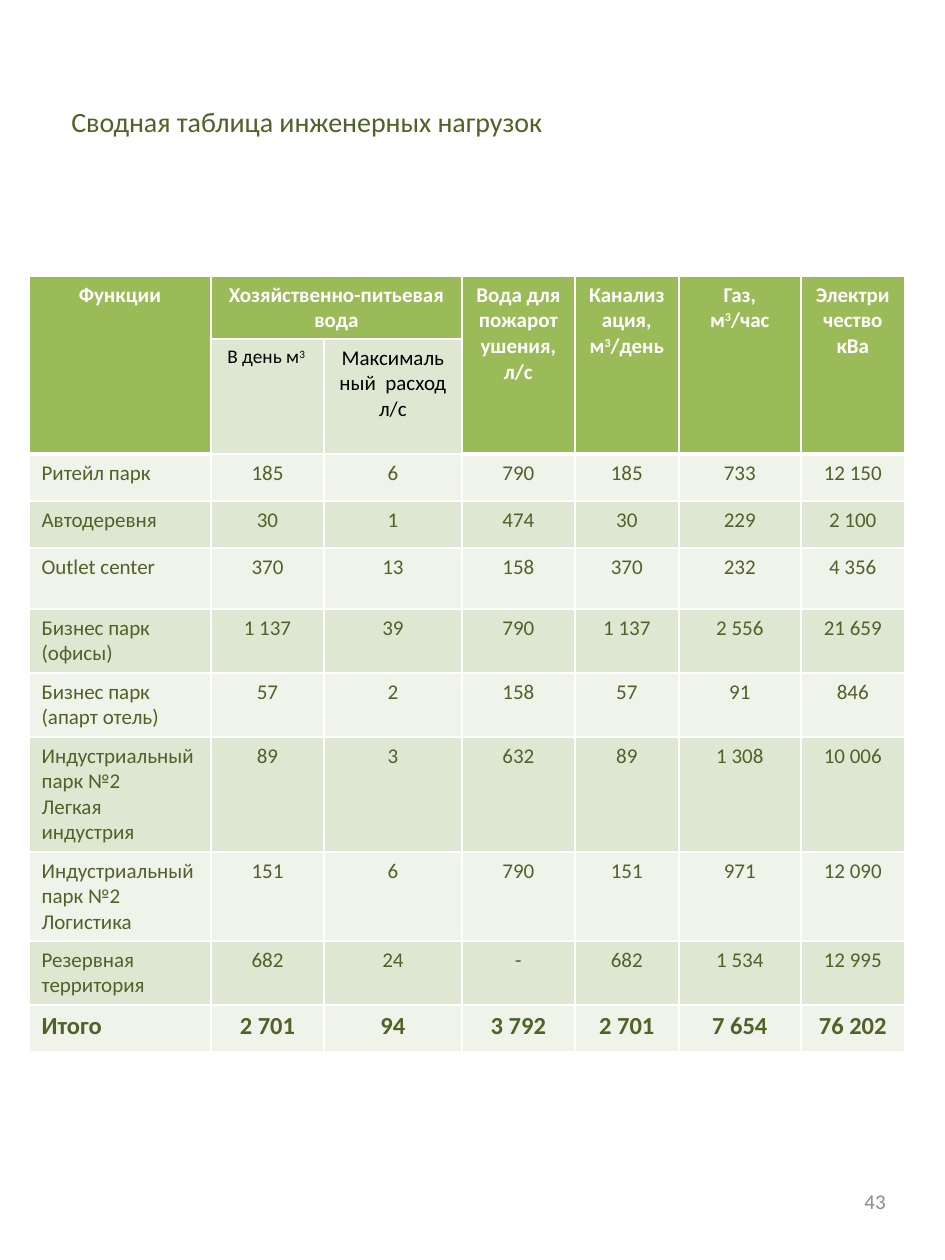
from lxml.etree import SubElement
from pptx import Presentation
from pptx.dml.color import RGBColor
from pptx.enum.text import MSO_ANCHOR as ANCHOR, PP_ALIGN as ALIGN
from pptx.oxml.ns import qn
from pptx.util import Emu, Pt

WHITE, BLACK, GREY = "FFFFFF", "000000", "8C8C8C"
GREEN, DARK_GREEN, BAND, PALE = "9BBB59", "4F6228", "DEE7D1", "EFF3EA"

COL_WIDTHS = [182, 113, 138, 113, 104, 122, 104]
ROW_HEIGHTS = [63, 115, 47, 47, 61, 64, 64, 115, 89, 64, 47]
HEADERS = {
    0: "Функции",
    1: "Хозяйственно-питьевая вода",
    3: "Вода для пожаротушения, л/с",
    4: "Канализация, м^3^/день",
    5: "Газ, м^3^/час",
    6: "Электричество кВа",
}
LOADS = [
    ["Ритейл парк", "185", "6", "790", "185", "733", "12 150"],
    ["Автодеревня", "30", "1", "474", "30", "229", "2 100"],
    ["Outlet center", "370", "13", "158", "370", "232", "4 356"],
    ["Бизнес парк (офисы)", "1 137", "39", "790", "1 137", "2 556", "21 659"],
    ["Бизнес парк (апарт отель)", "57", "2", "158", "57", "91", "846"],
    ["Индустриальный парк №2\nЛегкая индустрия", "89", "3", "632", "89", "1 308", "10 006"],
    ["Индустриальный парк №2\nЛогистика", "151", "6", "790", "151", "971", "12 090"],
    ["Резервная территория", "682", "24", "-", "682", "1 534", "12 995"],
    ["Итого", "2 701", "94", "3 792", "2 701", "7 654", "76 202"],
]


def px(n):
    """Convert pixels to EMU."""
    return Emu(round(n * 914400 / 126))


def rgb(value):
    """Turn a hex string into a colour."""
    return RGBColor.from_string(value)


def write(tf, text, size=12, color=DARK_GREEN, bold=False, align=ALIGN.LEFT):
    """Fill a text frame; newlines split paragraphs and ^ marks superscripts."""
    tf.word_wrap = True
    for i, line in enumerate(text.split("\n")):
        p = tf.paragraphs[0] if i == 0 else tf.add_paragraph()
        p.alignment = align
        for j, part in enumerate(line.split("^")):
            if not part:
                continue
            r = p.add_run()
            r.text = part
            r.font.name, r.font.size, r.font.bold = "Calibri", Pt(size), bold
            r.font.color.rgb = rgb(color)
            if j % 2:
                r.font._element.set("baseline", "30000")


def add_label(slide, box, text, anchor=ANCHOR.TOP, **fmt):
    """Place a text box in the given box."""
    tf = slide.shapes.add_textbox(*map(px, box)).text_frame
    tf.vertical_anchor = anchor
    write(tf, text, **fmt)


def style_cell(cell, fill, top=1, bottom=1):
    """Give a cell white borders and a solid fill."""
    tc_pr = cell._tc.get_or_add_tcPr()
    for side, width in zip("LRTB", (1, 1, top, bottom)):
        ln = SubElement(tc_pr, qn(f"a:ln{side}"), w=str(Pt(width)))
        SubElement(SubElement(ln, qn("a:solidFill")), qn("a:srgbClr"), val=WHITE)
    cell.fill.solid()
    cell.fill.fore_color.rgb = rgb(fill)


def add_header(table):
    """Build the two header rows with their merged cells."""
    for col in range(len(COL_WIDTHS)):
        split = col in (1, 2)
        style_cell(table.cell(0, col), GREEN, bottom=1 if split else 3)
        style_cell(table.cell(1, col), BAND if split else GREEN, bottom=1 if split else 3)
        if not split:
            table.cell(0, col).merge(table.cell(1, col))
    table.cell(0, 1).merge(table.cell(0, 2))
    for col, text in HEADERS.items():
        write(table.cell(0, col).text_frame, text, color=WHITE, bold=True, align=ALIGN.CENTER)
    write(table.cell(1, 1).text_frame, "В день м^3 ^", size=11, color=BLACK, align=ALIGN.CENTER)
    write(table.cell(1, 2).text_frame, "Максимальный  расход л/с", color=BLACK, align=ALIGN.CENTER)


def add_loads_table(slide, left, top):
    """Build the table of engineering loads from its top left corner."""
    size = sum(COL_WIDTHS), sum(ROW_HEIGHTS)
    frame = slide.shapes.add_table(len(ROW_HEIGHTS), len(COL_WIDTHS), *map(px, (left, top, *size)))
    table = frame.table
    for column, width in zip(table.columns, COL_WIDTHS):
        column.width = px(width)
    for row, height in zip(table.rows, ROW_HEIGHTS):
        row.height = px(height)
    add_header(table)
    for i, values in enumerate(LOADS):
        total = i == len(LOADS) - 1
        for col, text in enumerate(values):
            cell = table.cell(i + 2, col)
            style_cell(cell, BAND if i % 2 else PALE, top=3 if i == 0 and col not in (1, 2) else 1)
            write(cell.text_frame, text, size=14 if total else 12, bold=total,
                  align=ALIGN.CENTER if col else ALIGN.LEFT)


def main():
    """Build and save the slide."""
    prs = Presentation()
    prs.slide_width, prs.slide_height = px(945), px(1260)
    slide = prs.slides.add_slide(prs.slide_layouts[6])
    add_label(slide, (678, 1168, 220, 67), "43", anchor=ANCHOR.MIDDLE, color=GREY, align=ALIGN.RIGHT)
    add_loads_table(slide, 29, 276)
    add_label(slide, (59, 98, 630, 47), "Сводная таблица инженерных нагрузок", size=16)
    prs.save("out.pptx")


if __name__ == "__main__":
    main()
